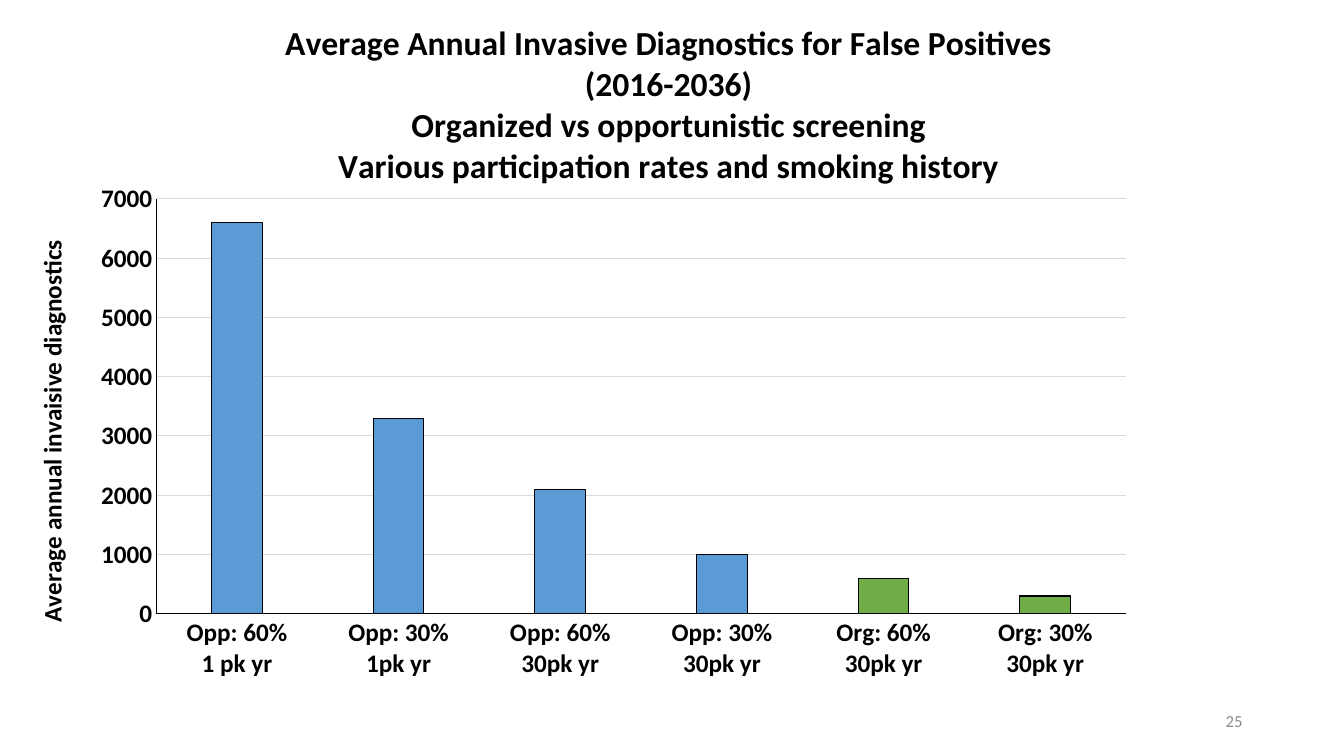
import pptx
import pptx.chart.data
import pptx.dml.color
import pptx.enum.chart
import pptx.enum.text
import pptx.oxml
import pptx.oxml.ns
import pptx.util

WIDE = pptx.util.Inches(13.33)
HIGH = pptx.util.Inches(7.5)
FACE = "Calibri"
HUES = {
    "ink": "000000",
    "grid": "D9D9D9",
    "opp": "5B9BD5",
    "org": "70AD47",
    "page": "8C8C8C",
}
TITLE = [
    "Average Annual Invasive Diagnostics for False Positives",
    "(2016-2036)",
    "Organized vs opportunistic screening",
    "Various participation rates and smoking history",
]
RATES = [
    ("Opp: 60%\n1 pk yr", 6600),
    ("Opp: 30%\n1pk yr", 3300),
    ("Opp: 60%\n30pk yr", 2100),
    ("Opp: 30%\n30pk yr", 1000),
    ("Org: 60%\n30pk yr", 600),
    ("Org: 30%\n30pk yr", 300),
]
PLOT = {"x": 0.099, "y": 0.284, "w": 0.759, "h": 0.592}


def hue(name):
    """Return the named colour."""
    return pptx.dml.color.RGBColor.from_string(HUES[name])


def place(left, top, width, height):
    """Turn shares of the slide into lengths."""
    return [int(WIDE * left), int(HIGH * top), int(WIDE * width), int(HIGH * height)]


def style(font, size, name="ink", bold=True):
    """Set the face, size, weight and colour of a font."""
    font.name = FACE
    font.size = pptx.util.Pt(size)
    font.bold = bold
    font.color.rgb = hue(name)


def stroke(line, name="ink"):
    """Draw a thin line in the named colour."""
    line.color.rgb = hue(name)
    line.width = pptx.util.Pt(0.75)


def write(frame, lines, size):
    """Fill a chart title with one bold paragraph per line."""
    frame.text = "\n".join(lines)
    for para in frame.paragraphs:
        style(para.font, size)


def dress(axis):
    """Format the labels and line of an axis."""
    axis.major_tick_mark = pptx.enum.chart.XL_TICK_MARK.NONE
    axis.minor_tick_mark = pptx.enum.chart.XL_TICK_MARK.NONE
    style(axis.tick_labels.font, 18)
    stroke(axis.format.line)


def fit(chart):
    """Fix the inner plot area at its share of the chart."""
    area = chart._chartSpace.chart.plotArea
    for old in area.findall(pptx.oxml.ns.qn("c:layout")):
        area.remove(old)
    sides = "".join(f'<c:{key} val="{val}"/>' for key, val in PLOT.items())
    area.insert(0, pptx.oxml.parse_xml(
        f'<c:layout {pptx.oxml.ns.nsdecls("c")}><c:manualLayout>'
        '<c:layoutTarget val="inner"/><c:xMode val="edge"/><c:yMode val="edge"/>'
        f'{sides}</c:manualLayout></c:layout>'))


def paint(plot):
    """Space the bars and colour them by kind of screening."""
    plot.gap_width = 219
    plot.overlap = -27
    plot.vary_by_categories = False
    bars = plot.series[0]
    bars.format.fill.solid()
    bars.format.fill.fore_color.rgb = hue("opp")
    stroke(bars.format.line)
    for spot, (label, _) in enumerate(RATES):
        if label.startswith("Org"):
            form = bars.points[spot].format
            form.fill.solid()
            form.fill.fore_color.rgb = hue("org")
            stroke(form.line)


def graph(slide):
    """Add the column chart of invasive diagnostics."""
    data = pptx.chart.data.CategoryChartData()
    data.categories = [label for label, _ in RATES]
    data.add_series("Series 1", [value for _, value in RATES])
    kind = pptx.enum.chart.XL_CHART_TYPE.COLUMN_CLUSTERED
    box = place(0.022, 0, 0.951, 0.927)
    chart = slide.shapes.add_chart(kind, *box, data).chart
    style(chart.font, 10, bold=False)
    chart.has_legend = False
    chart.has_title = True
    write(chart.chart_title.text_frame, TITLE, 24)
    chart.chart_title.include_in_layout = False
    dress(chart.category_axis)
    axis = chart.value_axis
    dress(axis)
    axis.minimum_scale, axis.maximum_scale, axis.major_unit = 0, 7000, 1000
    stroke(axis.major_gridlines.format.line, "grid")
    axis.has_title = True
    write(axis.axis_title.text_frame, ["Average annual invaisive diagnostics"], 18)
    paint(chart.plots[0])
    fit(chart)


def number(slide, text):
    """Add the page number at the lower right."""
    frame = slide.shapes.add_textbox(*place(0.707, 0.927, 0.225, 0.053)).text_frame
    frame.word_wrap = True
    frame.vertical_anchor = pptx.enum.text.MSO_ANCHOR.MIDDLE
    para = frame.paragraphs[0]
    para.text = text
    para.alignment = pptx.enum.text.PP_ALIGN.RIGHT
    style(para.font, 12, "page", False)


def main():
    """Build and save the slide."""
    deck = pptx.Presentation()
    deck.slide_width, deck.slide_height = WIDE, HIGH
    slide = deck.slides.add_slide(deck.slide_layouts[6])
    number(slide, "25")
    graph(slide)
    deck.save("out.pptx")


if __name__ == "__main__":
    main()
